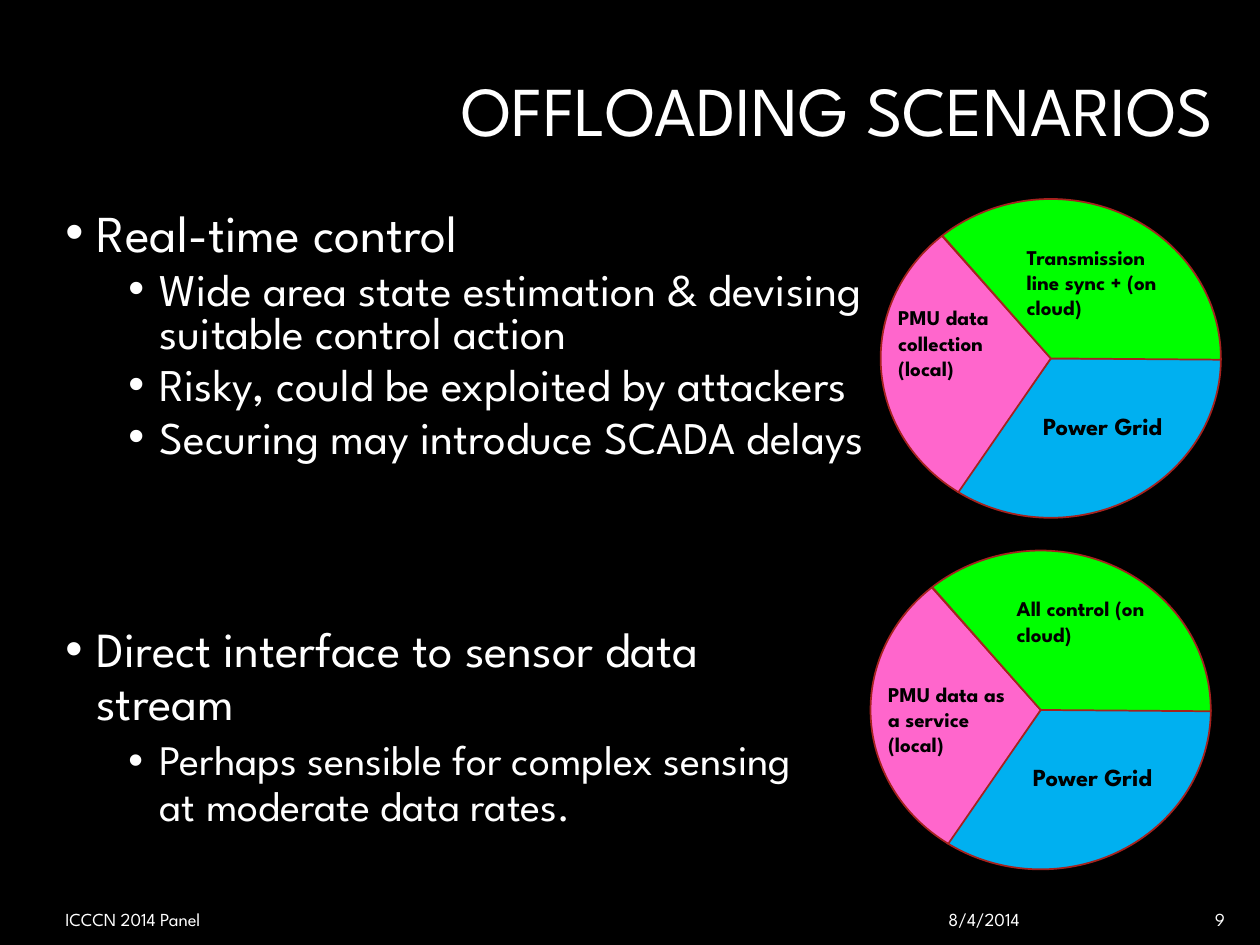
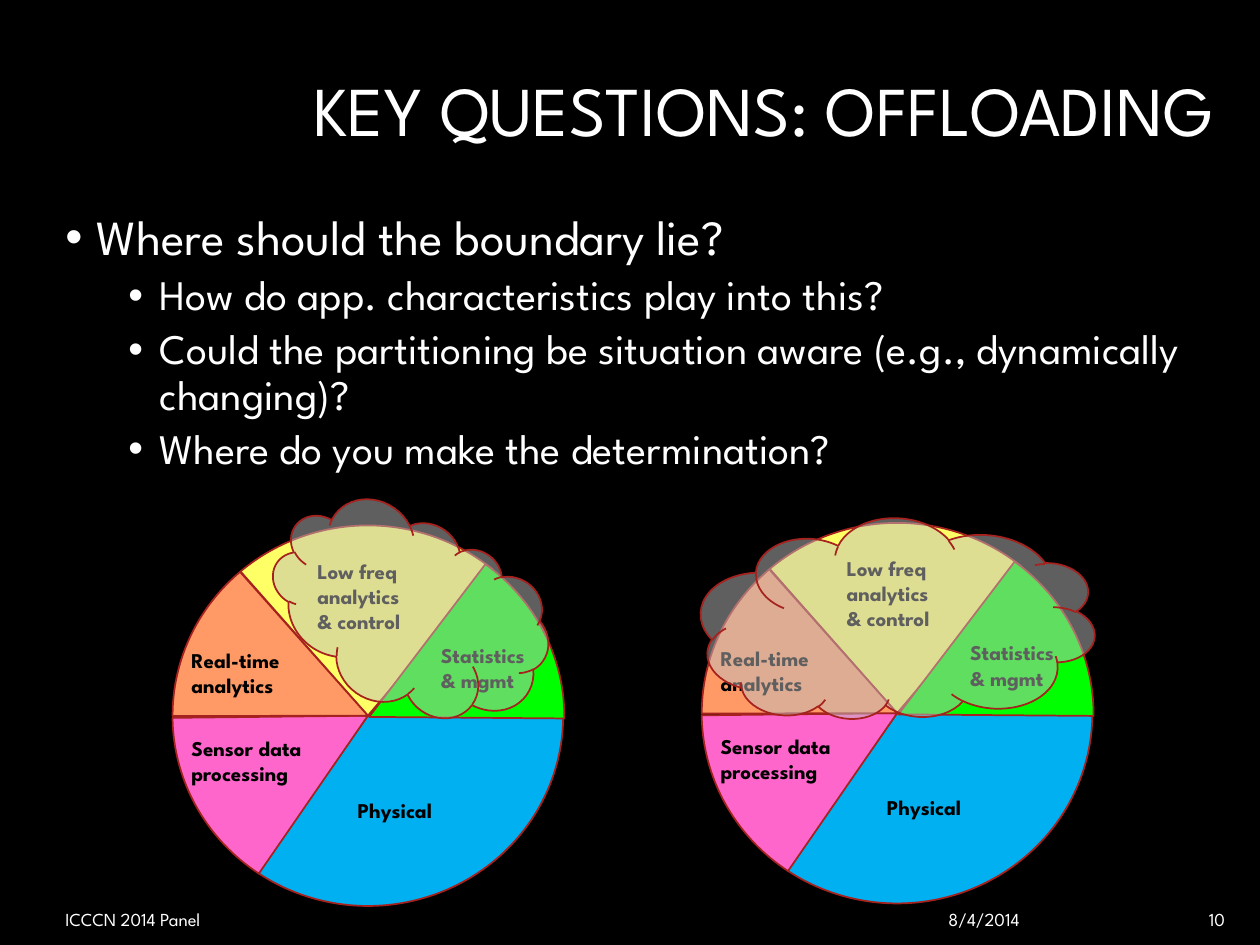
from dataclasses import dataclass

import pptx
import pptx.util
import pptx.dml.color
import pptx.enum.shapes
import pptx.enum.text
import pptx.oxml.ns
from lxml import etree

Inches = pptx.util.Inches
Pt = pptx.util.Pt
SHAPE = pptx.enum.shapes.MSO_SHAPE
ALIGN = pptx.enum.text.PP_ALIGN
ANCHOR = pptx.enum.text.MSO_ANCHOR
qn = pptx.oxml.ns.qn


@dataclass(frozen=True)
class Theme:
    font: str = "League Spartan"
    bg: str = "000000"
    text: str = "FFFFFF"
    label: str = "000000"
    outline: str = "A5221E"
    cloud: str = "BFBFBF"
    blue: str = "00B0F0"
    pink: str = "FF66CC"
    green: str = "00FF00"
    yellow: str = "FFFF66"
    orange: str = "FF9966"
    title_size: float = 40
    body_sizes: tuple = (28, 24)
    large_sizes: tuple = (29.6, 25.9)
    footer_size: float = 10.5
    label_size: float = 12
    grid_size: float = 14


T = Theme()
TITLE_BOX = (0.42, 0.27, 9.31, 1.26)
FOOTER_TOP, FOOTER_HEIGHT = 7.19, 0.21
INDENTS = (0.25, 0.75)
HANGING = 0.25
SPACE_BEFORE = (10, 5)


def rgb(value):
    return pptx.dml.color.RGBColor.from_string(value)


def inches(box):
    return [Inches(v) for v in box]


def add_bullet(p, level):
    p.level = level
    pPr = p._p.get_or_add_pPr()
    pPr.set("marL", str(Inches(INDENTS[level])))
    pPr.set("indent", str(-Inches(HANGING)))
    etree.SubElement(pPr, qn("a:buFont")).set("typeface", "Arial")
    etree.SubElement(pPr, qn("a:buChar")).set("char", "•")


def add_text(shapes, box, lines, sizes, color=T.text, bold=False, align=ALIGN.LEFT,
             anchor=ANCHOR.TOP, spacing=None, bullets=False):
    tf = shapes.add_textbox(*inches(box)).text_frame
    tf.word_wrap = True
    tf.vertical_anchor = anchor
    for i, (level, line) in enumerate(lines):
        p = tf.paragraphs[0] if i == 0 else tf.add_paragraph()
        if bullets:
            add_bullet(p, level)
        p.alignment = align
        if spacing:
            p.line_spacing = spacing
        if i:
            p.space_before = Pt(SPACE_BEFORE[level])
        r = p.add_run()
        r.text = line
        r.font.name = T.font
        r.font.size = Pt(sizes[level])
        r.font.bold = bold
        r.font.color.rgb = rgb(color)


def add_outlined(shapes, kind, box, fill):
    sp = shapes.add_shape(kind, *inches(box))
    sp.shadow.inherit = False
    sp.fill.solid()
    sp.fill.fore_color.rgb = rgb(fill)
    sp.line.color.rgb = rgb(T.outline)
    sp.line.width = Pt(1)
    return sp


def add_pie(s, box, sectors, labels):
    shapes = s.shapes.add_group_shape().shapes
    left, top, width, height = box
    for fill, start, end, shift in sectors:
        sp = add_outlined(shapes, SHAPE.PIE, (left + shift, top + shift, width, height), fill)
        for i, degrees in enumerate((start, end)):
            sp.adjustments[i] = degrees * 0.6
    for line, size, (dx, dy, w, h) in labels:
        add_text(shapes, (left + dx, top + dy, w, h), [(0, line)], [size],
                 color=T.label, bold=True)


def add_scenario_pie(s, left, top, local, local_box, cloud):
    sectors = [
        (T.blue, 0, 125.11, 0),
        (T.pink, 124.62, 228.37, 0),
        (T.green, 228.57, 0.45, 0),
    ]
    labels = [
        ("Power Grid", T.grid_size, (1.19, 1.63, 1.2, 0.54)),
        (local, T.label_size, local_box),
        (cloud, T.label_size, (1.06, 0.31, 1.28, 0.71)),
    ]
    add_pie(s, (left, top, 2.7, 2.53), sectors, labels)


def add_partition_pie(s, left, top):
    sectors = [
        (T.blue, 0, 125.11, 0),
        (T.pink, 124.62, 179.37, 0),
        (T.yellow, 228.57, 310.3, 0),
        (T.orange, 179.89, 228.37, 0),
        (T.green, 307.29, 0.45, 0.01),
    ]
    labels = [(line, T.label_size, box) for line, box in (
        ("Physical", (1.37, 2.11, 1.32, 0.29)),
        ("Sensor data processing", (0.05, 1.62, 1.32, 0.48)),
        ("Low freq analytics & control", (1.05, 0.21, 0.98, 0.71)),
        ("Real-time analytics", (0.05, 0.92, 1.32, 0.48)),
        ("Statistics & mgmt", (2.03, 0.88, 0.91, 0.5)),
    )]
    add_pie(s, (left, top, 3.1, 3.02), sectors, labels)


def add_cloud(s, box, rotation):
    sp = add_outlined(s.shapes, SHAPE.CLOUD, box, T.cloud)
    sp.rotation = rotation
    color = sp.fill._xPr.find(qn("a:solidFill"))[0]
    etree.SubElement(color, qn("a:alpha")).set("val", "50000")


def add_body(s, box, lines, sizes=T.body_sizes, spacing=0.9):
    add_text(s.shapes, box, lines, sizes, spacing=spacing, bullets=True)


def add_footer(s, number):
    for left, width, line, align in (
        (0.42, 5.87, "ICCCN 2014 Panel", ALIGN.LEFT),
        (6.48, 1.71, "8/4/2014", ALIGN.RIGHT),
        (8.57, 1.25, str(number), ALIGN.RIGHT),
    ):
        add_text(s.shapes, (left, FOOTER_TOP, width, FOOTER_HEIGHT), [(0, line)],
                 [T.footer_size], align=align, anchor=ANCHOR.MIDDLE)


def add_slide(prs, title, number):
    s = prs.slides.add_slide(prs.slide_layouts[6])
    s.background.fill.solid()
    s.background.fill.fore_color.rgb = rgb(T.bg)
    add_text(s.shapes, TITLE_BOX, [(0, title)], [T.title_size], align=ALIGN.RIGHT,
             anchor=ANCHOR.MIDDLE, spacing=0.9)
    add_footer(s, number)
    return s


def build_scenarios(prs):
    s = add_slide(prs, "OFFLOADING SCENARIOS", 9)
    add_body(s, (0.42, 1.64, 6.67, 2.82), [
        (0, "Real-time control"),
        (1, "Wide area state estimation & devising suitable control action"),
        (1, "Risky, could be exploited by attackers"),
        (1, "Securing may introduce SCADA delays"),
    ], sizes=T.large_sizes, spacing=0.8)
    add_body(s, (0.42, 4.91, 6.21, 2.15), [
        (0, "Direct interface to sensor data stream"),
        (1, "Perhaps sensible for complex sensing at moderate data rates."),
    ])
    add_scenario_pie(s, 6.99, 1.58, "PMU data collection (local)",
                     (0.04, 0.79, 1.15, 0.71), "Transmission line sync + (on cloud)")
    add_scenario_pie(s, 6.91, 4.37, "PMU data as a service (local)",
                     (0.04, 0.99, 1.23, 0.71), "All control (on cloud)")


def build_questions(prs):
    s = add_slide(prs, "KEY QUESTIONS: OFFLOADING", 10)
    add_body(s, (0.42, 1.64, 9.31, 2.24), [
        (0, "Where should the boundary lie?"),
        (1, "How do app. characteristics play into this?"),
        (1, "Could the partitioning be situation aware (e.g., dynamically changing)?"),
        (1, "Where do you make the determination?"),
    ])
    for left, top, cloud_box, rotation in (
        (1.37, 4.17, (2.11, 4.12, 2.27, 1.5), 35.6),
        (5.57, 4.15, (5.56, 4.12, 3.13, 1.61), 183),
    ):
        add_partition_pie(s, left, top)
        add_cloud(s, cloud_box, rotation)


def main():
    prs = pptx.Presentation()
    prs.slide_width, prs.slide_height = Inches(10), Inches(7.5)
    build_scenarios(prs)
    build_questions(prs)
    prs.save("out.pptx")


if __name__ == "__main__":
    main()
